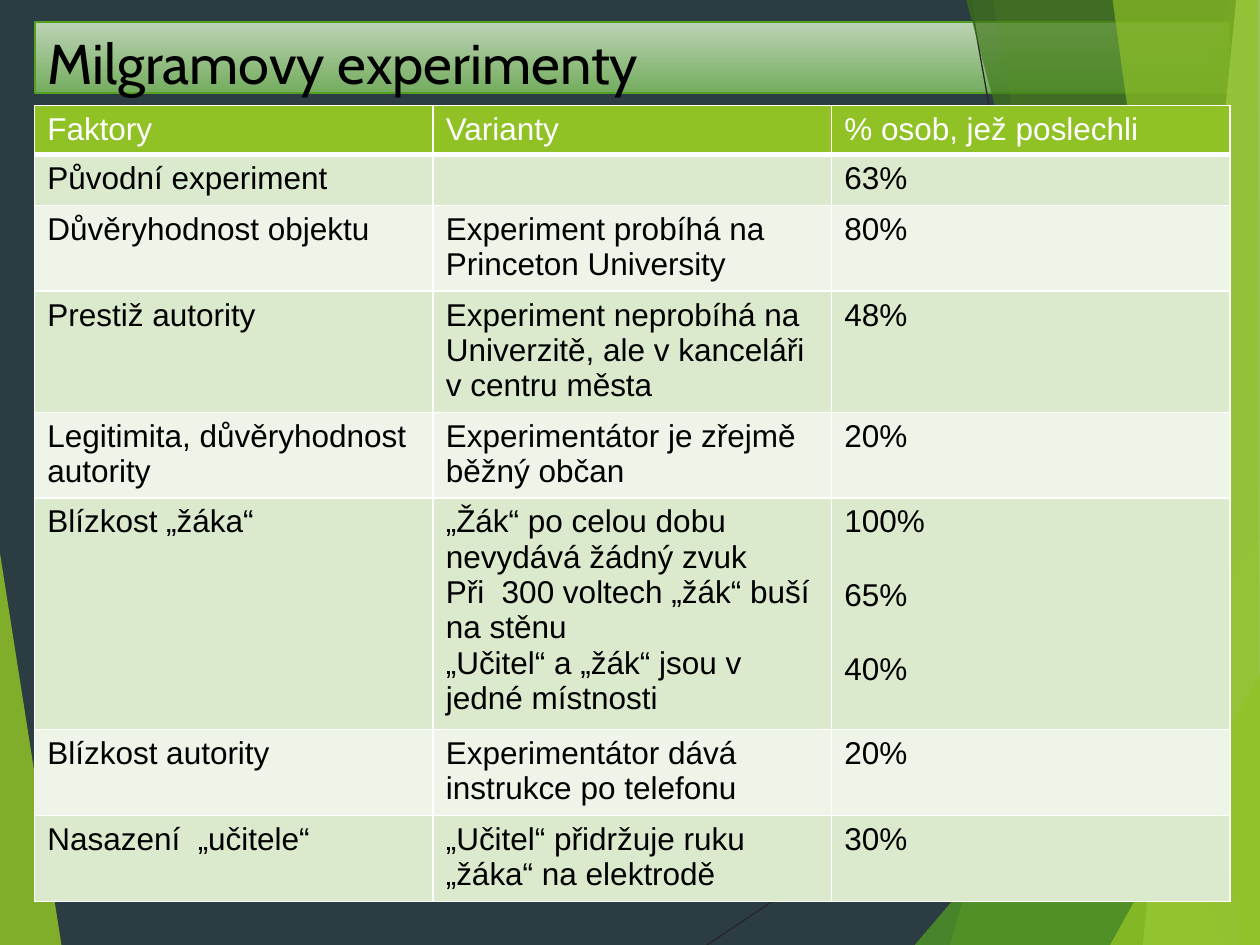
import pptx
import pptx.dml.color
import pptx.enum.dml
import pptx.enum.shapes
import pptx.enum.text
import pptx.oxml
import pptx.oxml.ns
import pptx.util
from lxml import etree
from pptx.util import Cm

COLORS = {
    "background": "2C3C43", "hairline": "262626", "lime": "90C226",
    "green": "54A021", "dark_green": "3F7819", "pale_lime": "C0E474",
    "title_top": "BCD2B4", "title_bottom": "74AD5F",
    "band_dark": "DBE9CD", "band_light": "EEF4E8",
    "white": "FFFFFF", "black": "000000",
}
rgb = {name: pptx.dml.color.RGBColor.from_string(value) for name, value in COLORS.items()}
qn = pptx.oxml.ns.qn


def write_text(frame, text, size=18, font="Arial", color="black", space_before=0):
    """Write one paragraph per line of text, with a gap before all but the first."""
    frame.word_wrap = True
    for index, line in enumerate(text.split("\n")):
        paragraph = frame.paragraphs[0] if index == 0 else frame.add_paragraph()
        paragraph.alignment = pptx.enum.text.PP_ALIGN.LEFT
        paragraph.space_before = pptx.util.Pt(space_before if index else 0)
        paragraph.font.size = pptx.util.Pt(size)
        if line:
            run = paragraph.add_run()
            run.text = line
            run.font.size = pptx.util.Pt(size)
            run.font.name = font
            run.font.bold = False
            run.font.color.rgb = rgb[color]


def add_border(cell, side, width):
    """Add a white border to one side of a table cell."""
    line = etree.SubElement(cell._tc.get_or_add_tcPr(), qn(f"a:ln{side}"),
                            w=str(pptx.util.Pt(width)))
    fill = etree.SubElement(line, qn("a:solidFill"))
    etree.SubElement(fill, qn("a:srgbClr"), val=COLORS["white"])


presentation = pptx.Presentation()
presentation.slide_width, presentation.slide_height = Cm(25.4), Cm(19.05)
slide = presentation.slides.add_slide(presentation.slide_layouts[5])
slide.background.fill.solid()
slide.background.fill.fore_color.rgb = rgb["background"]

# Thin lines behind the facets
for x1, y1, x2, y2 in [(14.25, 19.05, 25.4, 11.61), (19.56, 0, 22.94, 19.05)]:
    connector = slide.shapes.add_connector(
        pptx.enum.shapes.MSO_CONNECTOR.STRAIGHT, Cm(x1), Cm(y1), Cm(x2), Cm(y2))
    connector.line.color.rgb = rgb["hairline"]
    connector.line.width = pptx.util.Pt(0.75)
    etree.SubElement(connector._element.spPr, qn("a:effectLst"))

# Translucent facets: colour, opacity in percent, corners in cm
facets = [
    ("lime", 85, [(0, 11.15), (1.24, 19.05), (0, 19.05)]),
    ("lime", 30, [(24.77, 0), (19.15, 19.05), (25.4, 19.05), (25.4, 0)]),
    ("lime", 20, [(20.02, 0), (23.34, 19.05), (25.4, 19.05), (25.4, 0)]),
    ("green", 72, [(18.44, 19.05), (25.4, 10.9), (25.4, 19.05)]),
    ("dark_green", 70, [(19.48, 0), (24.64, 19.05), (25.4, 19.05), (25.4, 0)]),
    ("pale_lime", 70, [(24.92, 0), (23.04, 19.05), (25.4, 19.05), (25.4, 0)]),
    ("lime", 65, [(22.43, 0), (25.04, 19.05), (25.4, 19.05), (25.35, 0)]),
    ("lime", 80, [(22.38, 19.05), (25.4, 13.59), (25.4, 19.05)]),
]
for color, opacity, corners in facets:
    points = [(Cm(x), Cm(y)) for x, y in corners]
    builder = slide.shapes.build_freeform(*points[0])
    builder.add_line_segments(points[1:], close=True)
    facet = builder.convert_to_shape()
    facet.shadow.inherit = False
    facet.line.fill.background()
    facet.fill.solid()
    facet.fill.fore_color.rgb = rgb[color]
    color_element = facet._element.spPr.find(qn("a:solidFill"))[0]
    etree.SubElement(color_element, qn("a:alpha"), val=str(opacity * 1000))

# Title on a gradient bar
left, width = Cm(0.7), Cm(24.1)
title = slide.shapes.title
title.left, title.top, title.width, title.height = left, Cm(0.45), width, Cm(1.42)
title.fill.gradient()
title.fill.gradient_angle = 270
for stop, color in zip(title.fill.gradient_stops, ("title_top", "title_bottom")):
    stop.color.rgb = rgb[color]
title.line.color.rgb = rgb["green"]
title.line.width = pptx.util.Pt(1)
title.text_frame.auto_size = pptx.enum.text.MSO_AUTO_SIZE.NONE
title.text_frame.vertical_anchor = pptx.enum.text.MSO_ANCHOR.TOP
write_text(title.text_frame, "Milgramovy experimenty", size=32, font="Cabin")

# Table of factors: row height in cm, then the cells
rows = [
    (0.98, "Faktory", "Varianty", "% osob, jež poslechli"),
    (1.02, "Původní experiment", "", "63%"),
    (1.73, "Důvěryhodnost objektu", "Experiment probíhá na Princeton University", "80%"),
    (2.45, "Prestiž autority",
     "Experiment neprobíhá na Univerzitě, ale v kanceláři v centru města", "48%"),
    (1.72, "Legitimita, důvěryhodnost autority", "Experimentátor je zřejmě běžný občan", "20%"),
    (4.67, "Blízkost „žáka“",
     "„Žák“ po celou dobu nevydává žádný zvuk\n"
     "Při  300 voltech „žák“ buší na stěnu\n"
     "„Učitel“ a „žák“ jsou v jedné místnosti", "100%\n65%\n40%"),
    (1.73, "Blízkost autority", "Experimentátor dává instrukce po telefonu", "20%"),
    (1.73, "Nasazení  „učitele“", "„Učitel“ přidržuje ruku „žáka“ na elektrodě", "30%"),
]
table_height = Cm(sum(row[0] for row in rows))
table = slide.shapes.add_table(len(rows), 3, left, Cm(2.13), width, table_height).table
table.horz_banding = False
for row_index, (height, *texts) in enumerate(rows):
    is_header = row_index == 0
    band = "lime" if is_header else "band_dark" if row_index % 2 else "band_light"
    table.rows[row_index].height = Cm(height)
    for column_index, text in enumerate(texts):
        cell = table.cell(row_index, column_index)
        for side in "LRTB":
            add_border(cell, side, 3 if is_header and side == "B" else 1)
        cell.fill.solid()
        cell.fill.fore_color.rgb = rgb[band]
        write_text(cell.text_frame, text, color="white" if is_header else "black",
                   space_before=22 if column_index == 2 else 0)

presentation.save("out.pptx")
